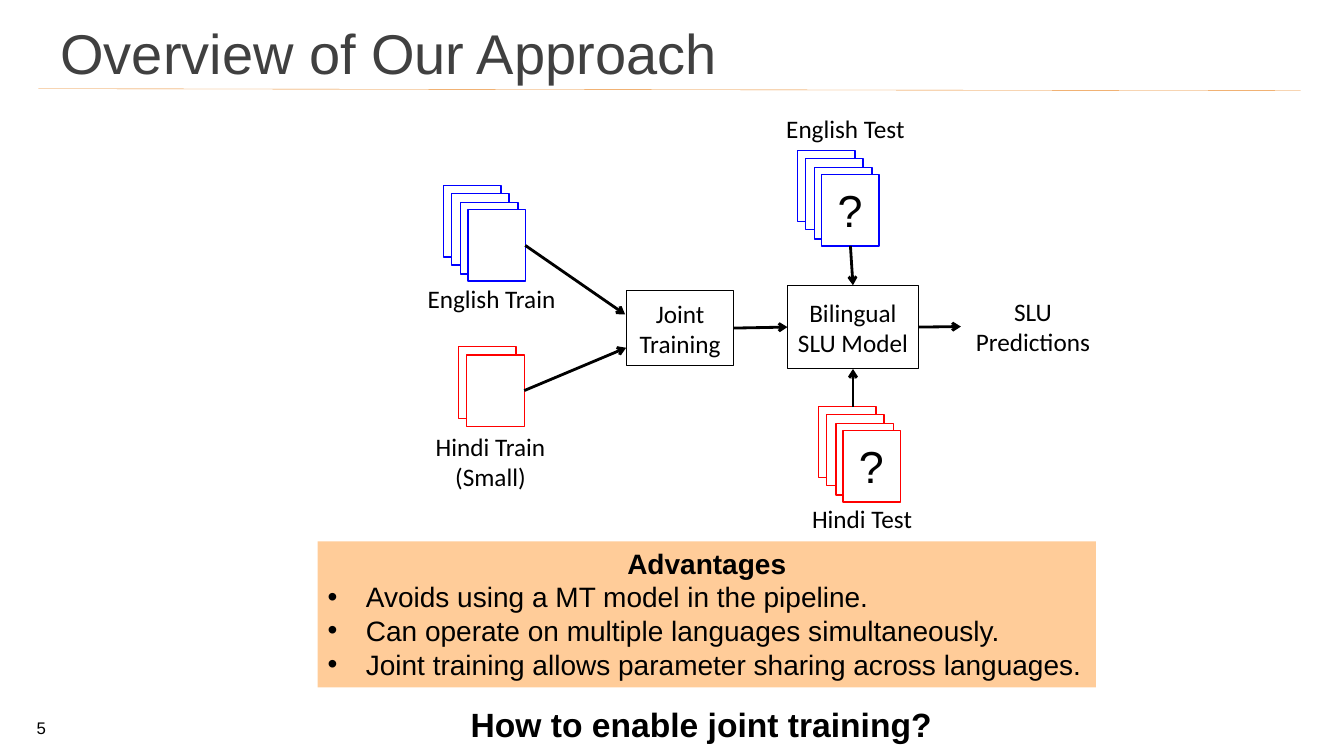
from lxml import etree
from pptx import Presentation
from pptx.dml.color import RGBColor
from pptx.enum.shapes import MSO_CONNECTOR, MSO_SHAPE
from pptx.enum.text import MSO_ANCHOR, PP_ALIGN
from pptx.oxml.ns import qn
from pptx.util import Inches, Pt

RECTANGLE = MSO_SHAPE.RECTANGLE
STRAIGHT = MSO_CONNECTOR.STRAIGHT
LEFT, CENTER = PP_ALIGN.LEFT, PP_ALIGN.CENTER
TOP, MIDDLE, BOTTOM = MSO_ANCHOR.TOP, MSO_ANCHOR.MIDDLE, MSO_ANCHOR.BOTTOM

BLACK = RGBColor(0x00, 0x00, 0x00)
WHITE = RGBColor(0xFF, 0xFF, 0xFF)
GRAY = RGBColor(0x40, 0x40, 0x40)
ORANGE = RGBColor(0xEA, 0x8A, 0x2A)
PEACH = RGBColor(0xFF, 0xCC, 0x99)
ENGLISH_BLUE = RGBColor(0x00, 0x00, 0xFF)
HINDI_RED = RGBColor(0xFF, 0x00, 0x00)

SHEET_WIDTH, SHEET_HEIGHT = 0.57, 0.71
SHEET_OFFSETS = (0, 0.08, 0.17, 0.24)
SITE_TOP, SITE_LEFT, SITE_BOTTOM, SITE_RIGHT = range(4)
ADVANTAGES = (
    "Avoids using a MT model in the pipeline.",
    "Can operate on multiple languages simultaneously.",
    "Joint training allows parameter sharing across languages.",
)


def add_span(para, text, size, font="Arial", color=BLACK, bold=False):
    """Append one formatted run to a paragraph."""
    span = para.add_run()
    span.text = text
    span.font.name = font
    span.font.size = Pt(size)
    span.font.bold = bold
    span.font.color.rgb = color


def add_text(page, area, text, size, align=LEFT, anchor=TOP, wrap=True, **style):
    """Add a one-paragraph text box."""
    box = page.shapes.add_textbox(*map(Inches, area))
    frame = box.text_frame
    frame.word_wrap = wrap
    frame.vertical_anchor = anchor
    para = frame.paragraphs[0]
    para.alignment = align
    add_span(para, text, size, **style)
    return box


def add_label(page, area, text):
    """Add a centred diagram label."""
    return add_text(page, area, text, 18, CENTER, MIDDLE, font="Calibri")


def add_rectangle(page, area, fill=None, line=None, width=1):
    """Add a flat rectangle with an optional fill and outline."""
    box = page.shapes.add_shape(RECTANGLE, *map(Inches, area))
    box.shadow.inherit = False
    if fill is None:
        box.fill.background()
    else:
        box.fill.solid()
        box.fill.fore_color.rgb = fill
    if line is None:
        box.line.fill.background()
    else:
        box.line.color.rgb = line
        box.line.width = Pt(width)
    return box


def add_stage(page, area, text):
    """Add an outlined processing stage."""
    box = add_rectangle(page, area, line=BLACK, width=0.75)
    frame = box.text_frame
    frame.word_wrap = True
    frame.vertical_anchor = MIDDLE
    frame.margin_left = frame.margin_right = Inches(0.05)
    para = frame.paragraphs[0]
    para.alignment = CENTER
    add_span(para, text, 18, "Calibri")
    return box


def add_stack(page, left, top, color, count=4, mark=None):
    """Add overlapping sheets and return the front one."""
    for offset in SHEET_OFFSETS[:count]:
        area = (left + offset, top + offset, SHEET_WIDTH, SHEET_HEIGHT)
        sheet = add_rectangle(page, area, WHITE, color)
    if mark:
        area = (left + offset + 0.06, top + offset + 0.03, 0.45, 0.64)
        add_text(page, area, mark, 32, wrap=False)
    return sheet


def add_line(page, start, end, color, width):
    """Add a straight line without a shadow."""
    line = page.shapes.add_connector(STRAIGHT, *map(Inches, start + end))
    line.line.color.rgb = color
    line.line.width = Pt(width)
    etree.SubElement(line._element.spPr, qn("a:effectLst"))
    return line


def add_arrow(page, start, end, source=None, target=None):
    """Add an arrow, joined to (shape, site) pairs where given."""
    arrow = add_line(page, start, end, BLACK, 2)
    if source:
        arrow.begin_connect(*source)
    if target:
        arrow.end_connect(*target)
    outline = arrow.line._get_or_add_ln()
    etree.SubElement(outline, qn("a:tailEnd"), type="arrow")


def add_advantages(page):
    """Add the highlighted panel with its heading and bullets."""
    box = add_rectangle(page, (3.15, 5.37, 7.72, 1.45), PEACH)
    frame = box.text_frame
    frame.word_wrap = False
    frame.vertical_anchor = TOP
    heading = frame.paragraphs[0]
    heading.alignment = CENTER
    add_span(heading, "Advantages", 20, bold=True)
    for advantage in ADVANTAGES:
        para = frame.add_paragraph()
        para.alignment = LEFT
        properties = para._p.get_or_add_pPr()
        properties.set("marL", str(Inches(0.38)))
        properties.set("indent", str(Inches(-0.38)))
        etree.SubElement(properties, qn("a:buFont"), typeface="Arial")
        etree.SubElement(properties, qn("a:buChar"), char="•")
        add_span(para, advantage, 20)


def add_diagram(page):
    """Add the training and testing flow."""
    model = add_stage(page, (7.81, 2.83, 1.3, 0.83), "Bilingual SLU Model")
    joint = add_stage(page, (6.21, 2.88, 1.07, 0.75), "Joint Training")
    predictions = add_label(page, (9.53, 2.9, 1.43, 0.68), "SLU Predictions")
    add_label(page, (4.09, 2.75, 1.57, 0.42), "English Train")
    add_label(page, (4.15, 4.34, 1.43, 0.47), "Hindi Train (Small)")
    add_label(page, (7.67, 1.06, 1.43, 0.42), "English Test")
    add_label(page, (7.9, 4.93, 1.3, 0.42), "Hindi Test")

    english_train = add_stack(page, 4.4, 1.84, ENGLISH_BLUE)
    hindi_train = add_stack(page, 4.55, 3.44, HINDI_RED, count=2)
    english_test = add_stack(page, 7.91, 1.49, ENGLISH_BLUE, mark="?")
    add_stack(page, 8.12, 4.03, HINDI_RED, mark="?")

    add_arrow(page, (5.21, 2.43), (6.2, 3.12), (english_train, SITE_RIGHT))
    add_arrow(page, (5.19, 3.87), (6.21, 3.45), (hindi_train, SITE_RIGHT))
    add_arrow(page, (7.28, 3.26), (7.81, 3.24),
              (joint, SITE_RIGHT), (model, SITE_LEFT))
    add_arrow(page, (9.11, 3.24), (9.53, 3.24),
              (model, SITE_RIGHT), (predictions, SITE_LEFT))
    add_arrow(page, (8.44, 2.44), (8.46, 2.83),
              (english_test, SITE_BOTTOM), (model, SITE_TOP))
    add_arrow(page, (8.46, 4.04), (8.46, 3.66), target=(model, SITE_BOTTOM))


def main():
    """Build and save the slide."""
    deck = Presentation()
    deck.slide_width, deck.slide_height = Inches(13.33), Inches(7.5)
    page = deck.slides.add_slide(deck.slide_layouts[6])
    add_line(page, (0.38, 0.88), (12.9, 0.9), ORANGE, 0.25)
    add_text(page, (0.5, 0.23, 10.92, 0.58), "Overview of Our Approach", 40,
             anchor=MIDDLE, color=GRAY)
    add_text(page, (0.13, 7.12, 0.56, 0.25), "5", 12, CENTER, BOTTOM)
    add_diagram(page)
    add_advantages(page)
    add_text(page, (4.57, 6.93, 4.82, 0.5), "How to enable joint training?", 24,
             wrap=False, bold=True)
    deck.save("out.pptx")


if __name__ == "__main__":
    main()
